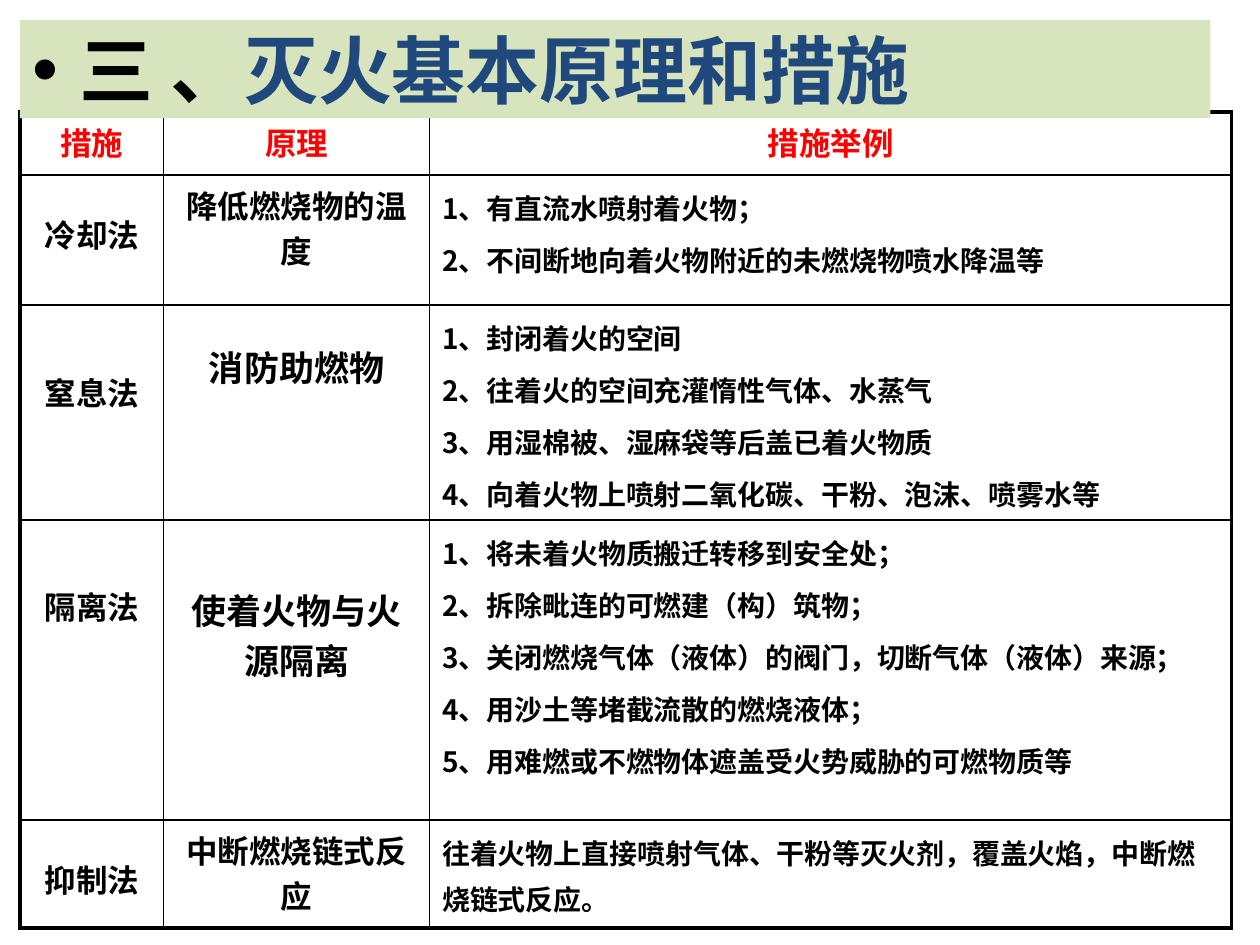
from dataclasses import dataclass

from lxml.etree import SubElement
from pptx import Presentation
from pptx.dml.color import RGBColor
from pptx.enum.text import MSO_ANCHOR, MSO_AUTO_SIZE, PP_ALIGN
from pptx.oxml.ns import qn
from pptx.util import Cm, Pt

COLORS = {
    "black": "000000",
    "header": "FF0000",
    "title": "1F497D",
    "banner": "D7E4BD",
}
CJK_FONT = "Noto Sans CJK SC"
COLUMN_WIDTHS = (2.9, 5.36, 16.17)
ROW_HEIGHTS = (1.27, 2.62, 4.32, 6.05, 2.18)
TOP, LOWER, LOWEST = 0.13, 0.72, 1.28  # where text starts in a cell, in cm


@dataclass
class Measure:
    name: str
    name_top: float
    principle: str
    principle_top: float
    principle_size: int
    examples: tuple[str, ...]


HEADERS = ("措施", "原理", "措施举例")
MEASURES = (
    Measure("冷却法", LOWER, "降低燃烧物的温度", TOP, 18, (
        "1、有直流水喷射着火物；",
        "2、不间断地向着火物附近的未燃烧物喷水降温等",
    )),
    Measure("窒息法", LOWEST, "消防助燃物", LOWER, 20, (
        "1、封闭着火的空间",
        "2、往着火的空间充灌惰性气体、水蒸气",
        "3、用湿棉被、湿麻袋等后盖已着火物质",
        "4、向着火物上喷射二氧化碳、干粉、泡沫、喷雾水等",
    )),
    Measure("隔离法", LOWEST, "使着火物与火源隔离", LOWEST, 20, (
        "1、将未着火物质搬迁转移到安全处；",
        "2、拆除毗连的可燃建（构）筑物；",
        "3、关闭燃烧气体（液体）的阀门，切断气体（液体）来源；",
        "4、用沙土等堵截流散的燃烧液体；",
        "5、用难燃或不燃物体遮盖受火势威胁的可燃物质等",
    )),
    Measure("抑制法", LOWER, "中断燃烧链式反应", TOP, 18, (
        "往着火物上直接喷射气体、干粉等灭火剂，覆盖火焰，中断燃烧链式反应。",
    )),
)


def add_run(paragraph, text: str, size: float, font: str, color: str) -> None:
    run = paragraph.add_run()
    run.text = text
    run.font.size = Pt(size)
    run.font.bold = True
    run.font.name = font
    run.font.color.rgb = RGBColor.from_string(COLORS[color])
    SubElement(run.font._element, qn("a:ea"), typeface=CJK_FONT)


def set_borders(cell, widths: dict[str, float]) -> None:
    properties = cell._tc.get_or_add_tcPr()
    for position, (side, width) in enumerate(widths.items()):
        line = SubElement(properties, qn(f"a:{side}"), w=str(Pt(width)))
        fill = SubElement(line, qn("a:solidFill"))
        SubElement(fill, qn("a:srgbClr"), val=COLORS["black"])
        properties.insert(position, line)


def write_centered(cell, text: str, top: float = TOP, size: int = 18,
                   color: str = "black") -> None:
    cell.margin_top = Cm(top)
    paragraph = cell.text_frame.paragraphs[0]
    paragraph.alignment = PP_ALIGN.CENTER
    add_run(paragraph, text, size, "Arial", color)


def write_examples(cell, examples: tuple[str, ...]) -> None:
    frame = cell.text_frame
    for index, example in enumerate(examples):
        paragraph = frame.add_paragraph() if index else frame.paragraphs[0]
        paragraph.line_spacing = 1.15
        paragraph.space_before = Pt(3.2 if index else 0)
        add_run(paragraph, example, 16, CJK_FONT, "black")


def add_measures_table(slide) -> None:
    row_count, column_count = len(ROW_HEIGHTS), len(COLUMN_WIDTHS)
    table = slide.shapes.add_table(
        row_count, column_count, Cm(0.4), Cm(2.26),
        Cm(sum(COLUMN_WIDTHS)), Cm(sum(ROW_HEIGHTS))).table
    table.first_row = table.horz_banding = False
    for column, width in zip(table.columns, COLUMN_WIDTHS):
        column.width = Cm(width)
    for row, height in zip(table.rows, ROW_HEIGHTS):
        row.height = Cm(height)

    for row in range(row_count):
        for column in range(column_count):
            cell = table.cell(row, column)
            cell.fill.background()
            outer = {
                "lnL": column == 0,
                "lnR": column == column_count - 1,
                "lnT": row == 0,
                "lnB": row == row_count - 1,
            }
            set_borders(cell, {side: 2.25 if edge else 1
                               for side, edge in outer.items()})

    for column, header in enumerate(HEADERS):
        write_centered(table.cell(0, column), header, color="header")
    for row, measure in enumerate(MEASURES, start=1):
        write_centered(table.cell(row, 0), measure.name, measure.name_top)
        write_centered(table.cell(row, 1), measure.principle,
                       measure.principle_top, measure.principle_size)
        write_examples(table.cell(row, 2), measure.examples)


def format_title(slide) -> None:
    title = slide.shapes.title
    title.left, title.top = Cm(0.4), Cm(0.4)
    title.width, title.height = Cm(24), Cm(1.98)
    title.fill.solid()
    title.fill.fore_color.rgb = RGBColor.from_string(COLORS["banner"])
    frame = title.text_frame
    frame.auto_size = MSO_AUTO_SIZE.NONE
    frame.word_wrap = True
    frame.vertical_anchor = MSO_ANCHOR.MIDDLE
    paragraph = frame.paragraphs[0]
    paragraph.alignment = PP_ALIGN.LEFT
    properties = paragraph._p.get_or_add_pPr()
    properties.set("marL", str(Cm(0.95)))
    properties.set("indent", str(Cm(-0.95)))
    SubElement(properties, qn("a:buFont"), typeface="Arial")
    SubElement(properties, qn("a:buChar"), char="•")
    add_run(paragraph, "三 、", 42.3, "Calibri", "black")
    add_run(paragraph, "灭火基本原理和措施", 42.3, "Calibri", "title")
    # The banner overlaps the top edge of the table, so it goes in front.
    slide.shapes._spTree.append(title._element)


def main() -> None:
    presentation = Presentation()
    presentation.slide_width, presentation.slide_height = Cm(25.4), Cm(19.05)
    slide = presentation.slides.add_slide(presentation.slide_layouts[5])
    add_measures_table(slide)
    format_title(slide)
    presentation.save("out.pptx")


if __name__ == "__main__":
    main()
